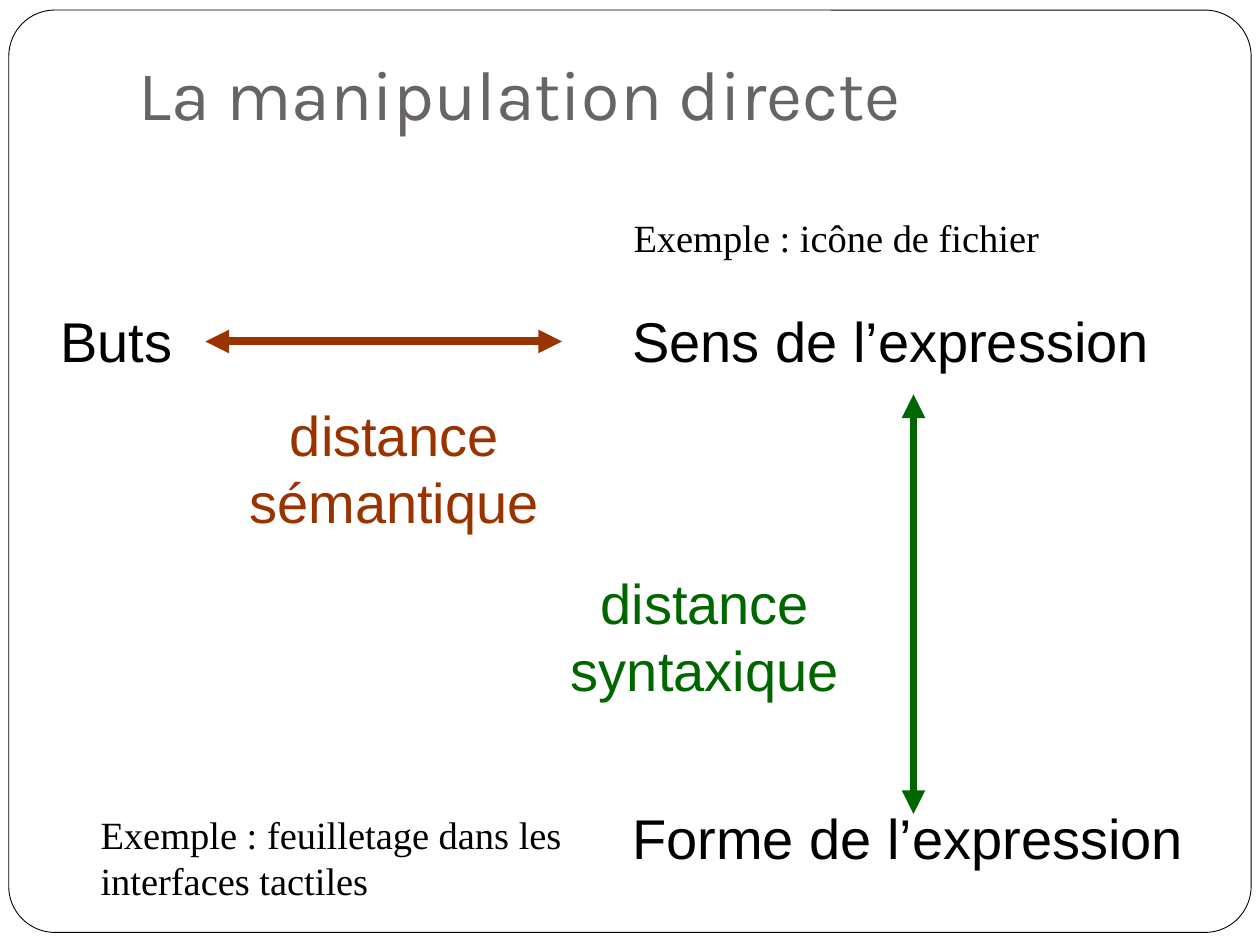
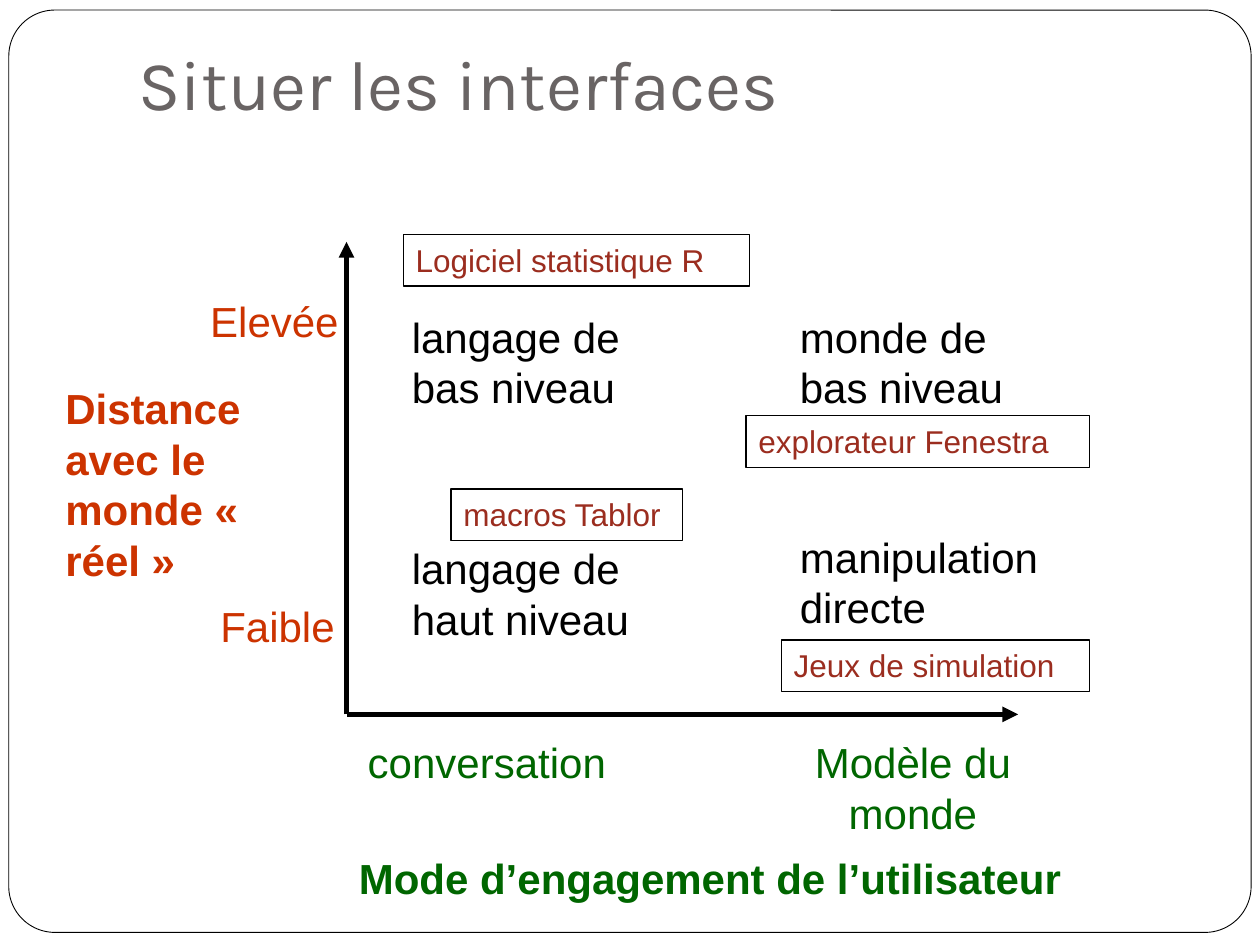
"""Build two slides on direct manipulation and the placing of interfaces."""
from dataclasses import dataclass

from lxml.etree import SubElement
from pptx import Presentation
from pptx.dml.color import RGBColor
from pptx.enum.shapes import MSO_CONNECTOR as Link, MSO_SHAPE as Form
from pptx.enum.text import MSO_ANCHOR as Anchor, PP_ALIGN as Align
from pptx.oxml.ns import qn
from pptx.slide import Slide
from pptx.util import Emu, Pt

SCALE = 9144
BLACK, WHITE, GREY = "000000", "FFFFFF", "696464"
RUST, RED, BRICK, GREEN = "993300", "CC3300", "9B2D1F", "006600"
SANS, SERIF, HEAD = "Arial", "Times New Roman", "Karla"


@dataclass
class Label:
    text: str
    x: int
    y: int
    w: int
    h: int
    size: int = 24
    color: str = BLACK
    face: str = SANS
    bold: bool = False
    mid: bool = False
    wrap: bool = True
    edge: bool = False


@dataclass
class Arrow:
    x1: int
    y1: int
    x2: int
    y2: int
    color: str = BLACK
    width: float = 3
    both: bool = False


def px(*sizes: int) -> list[Emu]:
    return [Emu(size * SCALE) for size in sizes]


def rgb(code: str) -> RGBColor:
    return RGBColor.from_string(code)


def style(para, face: str, size: int, color: str, bold: bool = False) -> None:
    font = para.font
    font.name, font.size, font.bold = face, Pt(size), bold
    font.color.rgb = rgb(color)


def draw_label(slide: Slide, item: Label) -> None:
    box = slide.shapes.add_textbox(*px(item.x, item.y, item.w, item.h))
    if item.edge:
        box.line.color.rgb = rgb(BLACK)
        box.line.width = Pt(0.75)
    frame = box.text_frame
    frame.word_wrap = item.wrap
    frame.text = item.text
    for para in frame.paragraphs:
        para.alignment = Align.CENTER if item.mid else Align.LEFT
        style(para, item.face, item.size, item.color, item.bold)


def draw_arrow(slide: Slide, item: Arrow) -> None:
    ends = px(item.x1, item.y1, item.x2, item.y2)
    link = slide.shapes.add_connector(Link.STRAIGHT, *ends)
    link.line.color.rgb = rgb(item.color)
    link.line.width = Pt(item.width)
    tips = ("headEnd", "tailEnd") if item.both else ("tailEnd",)
    for tip in tips:
        SubElement(link.line._get_or_add_ln(), qn(f"a:{tip}"), type="triangle")
    SubElement(link.element.spPr, qn("a:effectLst"))


def add_slide(deck, text: str, top: int, arrows: list[Arrow],
              labels: list[Label]) -> None:
    slide = deck.slides.add_slide(deck.slide_layouts[5])
    title = slide.shapes.title
    title.left, title.top, title.width, title.height = px(100, top, 850, 87)
    frame = title.text_frame
    frame.text = text
    frame.vertical_anchor = Anchor.BOTTOM
    frame.margin_bottom = px(10)[0]
    para = frame.paragraphs[0]
    para.alignment = Align.LEFT
    style(para, HEAD, 40, GREY)

    card = slide.shapes.add_shape(Form.ROUNDED_RECTANGLE, *px(7, 8, 986, 732))
    card.adjustments[0] = 0.05
    card.shadow.inherit = False
    card.fill.solid()
    card.fill.fore_color.rgb = rgb(WHITE)
    card.line.color.rgb = rgb(BLACK)
    card.line.width = Pt(0.5)
    title.element.addprevious(card.element)

    for arrow in arrows:
        draw_arrow(slide, arrow)
    for label in labels:
        draw_label(slide, label)


def term(text: str, x: int, y: int, w: int, wrap: bool = True) -> Label:
    return Label(text, x, y, w, 63, 32, wrap=wrap)


def gap(text: str, x: int, y: int, w: int, color: str) -> Label:
    return Label(text, x, y, w, 117, 32, color, mid=True, wrap=False)


def note(text: str, x: int, y: int, w: int, h: int) -> Label:
    return Label(text, x, y, w, h, 22, face=SERIF)


def kind(text: str, x: int, y: int) -> Label:
    return Label(text, x, y, 225, 90)


def case(text: str, x: int, y: int, w: int) -> Label:
    return Label(text, x, y, w, 41, 18, BRICK, edge=True)


def tick(text: str, x: int, y: int, w: int, color: str) -> Label:
    return Label(text, x, y, w, 50, color=color, wrap=False)


def main() -> None:
    deck = Presentation()
    deck.slide_width, deck.slide_height = px(1000, 750)

    add_slide(deck, "La manipulation directe", 30, [
        Arrow(163, 271, 446, 271, RUST, 4.5, True),
        Arrow(725, 646, 725, 313, GREEN, 4.5, True),
    ], [
        term("Buts", 38, 238, 109, False),
        term("Sens de l’expression", 492, 238, 467),
        term("Forme de l’expression", 492, 633, 467),
        gap("distance\nsémantique", 188, 313, 250, RUST),
        gap("distance\nsyntaxique", 442, 446, 235, GREEN),
        note("Exemple : icône de fichier", 493, 165, 346, 47),
        note("Exemple : feuilletage dans les interfaces tactiles",
             70, 639, 414, 84),
    ])

    left, base = 275, 567
    add_slide(deck, "Situer les interfaces", 22, [
        Arrow(left, base, left, 192),
        Arrow(left, base, 808, base),
    ], [
        Label("Distance\navec le monde « réel »", 42, 299, 172, 172,
              color=RED, bold=True),
        tick("Elevée", 157, 230, 122, RED),
        tick("Faible", 165, 472, 111, RED),
        Label("Mode d’engagement de l’utilisateur", left, 672, 583, 50,
              color=GREEN, bold=True, wrap=False),
        tick("conversation", 282, 580, 209, GREEN),
        Label("Modèle du monde", 632, 580, 185, 90, color=GREEN, mid=True),
        kind("langage de bas niveau", 317, 242),
        kind("langage de haut niveau", 317, 426),
        kind("monde de bas niveau", 625, 242),
        kind("manipulation\ndirecte", 625, 417),
        case("Logiciel statistique R", 320, 186, 275),
        case("macros Tablor", 358, 388, 184),
        case("explorateur Fenestra", 592, 330, 273),
        case("Jeux de simulation", 620, 508, 245),
    ])
    deck.save("out.pptx")


if __name__ == "__main__":
    main()
